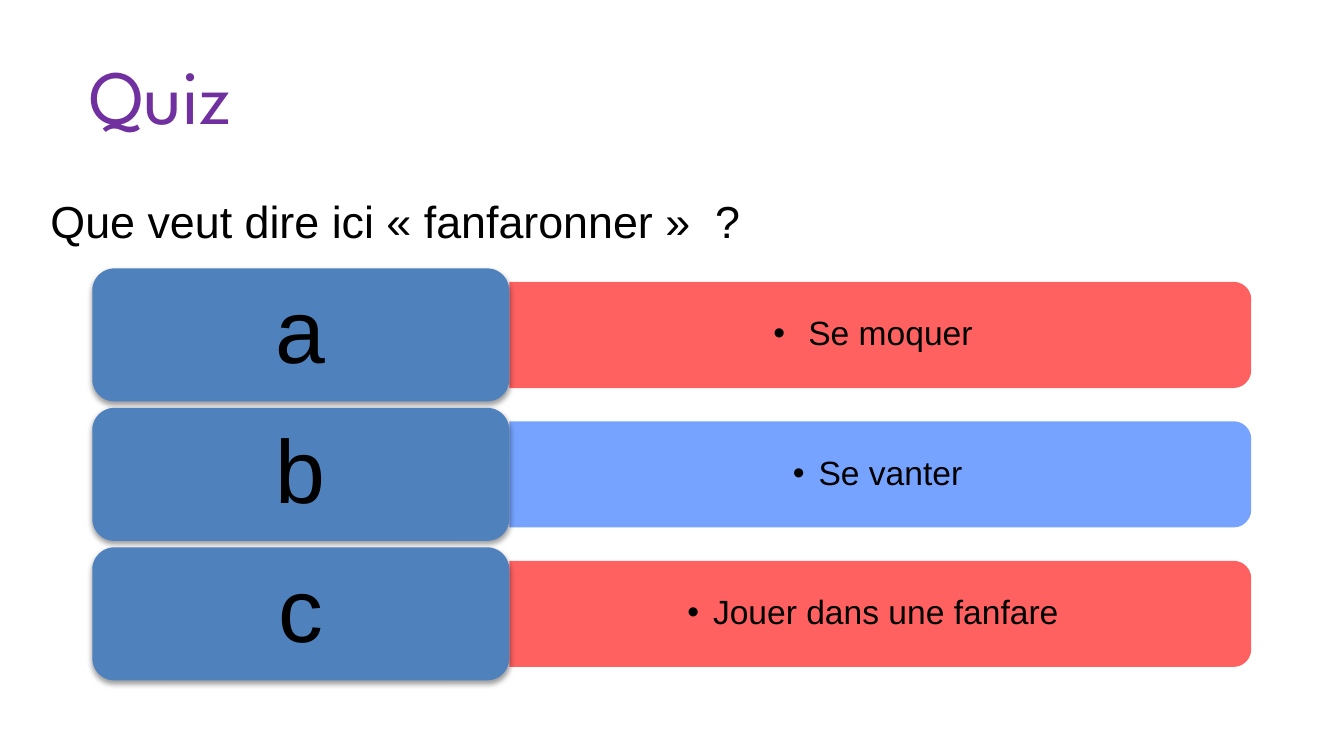
from dataclasses import dataclass

from lxml import etree
from pptx import Presentation
from pptx import util as u
from pptx.dml.color import RGBColor
from pptx.enum import shapes, text
from pptx.oxml import ns

WIDTH = u.Inches(10)
HEIGHT = WIDTH * 9 // 16
PURPLE = RGBColor(0x70, 0x30, 0xA0)
BLACK = RGBColor(0, 0, 0)
STEEL = RGBColor(0x4F, 0x81, 0xBD)
RED = RGBColor(0xFF, 0x50, 0x50)
BLUE = RGBColor(0x66, 0x99, 0xFF)

# Shares of the slide, in percent
FIRST_ROW, ROW_STEP, ROW_HEIGHT = 35.5, 18.45, 17.6
LETTER_LEFT, LETTER_WIDTH = 6.87, 31.03
BAR_LEFT, BAR_WIDTH, BAR_HEIGHT = 37.9, 55.2, 14.05
ANSWER_WIDTH, ANSWER_HEIGHT = 54.8, 12.62


@dataclass(frozen=True)
class Box:
    left: float
    top: float
    width: float
    height: float

    def emu(self) -> tuple[int, int, int, int]:
        return (int(self.left * WIDTH / 100), int(self.top * HEIGHT / 100),
                int(self.width * WIDTH / 100), int(self.height * HEIGHT / 100))


@dataclass(frozen=True)
class Choice:
    letter: str
    runs: tuple[tuple[str, bool], ...]
    color: RGBColor


CHOICES = (
    Choice("a", ((" ", True), ("Se moquer ", False)), RED),
    Choice("b", (("Se vanter", False),), BLUE),
    Choice("c", (("Jouer dans une fanfare ", False),), RED),
)


def add_xml(parent, tag: str, **attributes: str):
    return etree.SubElement(parent, ns.qn(tag), attributes)


def write(shape, runs, size: float, color: RGBColor, font: str = "Arial",
          align=text.PP_ALIGN.LEFT, anchor=text.MSO_ANCHOR.MIDDLE,
          inset: tuple[float, float] = (0, 0), line_spacing: float = 1):
    frame = shape.text_frame
    across, down = map(u.Inches, inset)
    settings = {"word_wrap": True, "vertical_anchor": anchor,
                "auto_size": text.MSO_AUTO_SIZE.NONE,
                "margin_left": across, "margin_right": across,
                "margin_top": down, "margin_bottom": down}
    for name, value in settings.items():
        setattr(frame, name, value)
    paragraph = frame.paragraphs[0]
    paragraph.alignment = align
    paragraph.line_spacing = line_spacing
    for words, bold in runs:
        run = paragraph.add_run()
        run.text = words
        run.font.color.rgb = color
        for name, value in {"name": font, "size": u.Pt(size), "bold": bold}.items():
            setattr(run.font, name, value)
    return paragraph


def add_filled(slide, kind, place: tuple[int, int, int, int], color: RGBColor):
    shape = slide.shapes.add_shape(kind, *place)
    shape.shadow.inherit = False
    shape.fill.solid()
    shape.fill.fore_color.rgb = color
    shape.line.fill.background()
    return shape


def add_bar(slide, middle: float, color: RGBColor) -> None:
    """Draw a bar rounded on its right end: an upright shape turned by 90 degrees."""
    left, top, length, thickness = Box(
        BAR_LEFT, middle - BAR_HEIGHT / 2, BAR_WIDTH, BAR_HEIGHT).emu()
    shift = (length - thickness) // 2
    bar = add_filled(slide, shapes.MSO_SHAPE.ROUND_2_SAME_RECTANGLE,
                     (left + shift, top - shift, thickness, length), color)
    bar.rotation = 90
    solid = bar._element.spPr.find(ns.qn("a:solidFill"))
    add_xml(solid.find(ns.qn("a:srgbClr")), "a:alpha", val="90000")


def add_answer(slide, middle: float, choice: Choice) -> None:
    place = Box(BAR_LEFT, middle - ANSWER_HEIGHT / 2, ANSWER_WIDTH, ANSWER_HEIGHT)
    answer = slide.shapes.add_textbox(*place.emu())
    paragraph = write(answer, choice.runs, 18, BLACK, align=text.PP_ALIGN.CENTER,
                      inset=(0.27, 0.14), line_spacing=0.9)
    paragraph.level = 1
    properties = paragraph._p.get_or_add_pPr()
    properties.set("marL", str(u.Inches(0.19)))
    properties.set("indent", str(-u.Inches(0.19)))
    add_xml(properties, "a:buFont", typeface="Arial")
    add_xml(properties, "a:buChar", char="•")


def add_letter(slide, top: float, letter: str) -> None:
    place = Box(LETTER_LEFT, top, LETTER_WIDTH, ROW_HEIGHT)
    tile = add_filled(slide, shapes.MSO_SHAPE.ROUNDED_RECTANGLE, place.emu(), STEEL)
    effects = tile._element.spPr.find(ns.qn("a:effectLst"))
    shadow = add_xml(effects, "a:outerShdw", blurRad=str(u.Pt(3.1)),
                     dist=str(u.Pt(1.6)), dir="5400000", rotWithShape="0")
    add_xml(add_xml(shadow, "a:srgbClr", val="000000"), "a:alpha", val="38000")
    write(tile, [(letter, False)], 48, BLACK, align=text.PP_ALIGN.CENTER,
          inset=(0.25, 0.15), line_spacing=0.9)


def main() -> None:
    deck = Presentation()
    deck.slide_width, deck.slide_height = WIDTH, HEIGHT
    slide = deck.slides.add_slide(deck.slide_layouts[5])

    title = slide.shapes.title
    title.left, title.top, title.width, title.height = Box(6.65, 2.75, 86.2, 19.4).emu()
    write(title, [("Quiz", False)], 41, PURPLE, font="League Spartan")

    for row, choice in enumerate(CHOICES):
        top = FIRST_ROW + row * ROW_STEP
        middle = top + ROW_HEIGHT / 2
        add_bar(slide, middle, choice.color)
        add_answer(slide, middle, choice)
        add_letter(slide, top, choice.letter)

    question = slide.shapes.add_textbox(*Box(2.77, 24.71, 89.8, 8.9).emu())
    write(question, [("Que veut dire ici « fanfaronner »  ?", False)], 24, BLACK,
          anchor=text.MSO_ANCHOR.TOP, inset=(0.1, 0.05))

    deck.save("out.pptx")


if __name__ == "__main__":
    main()
